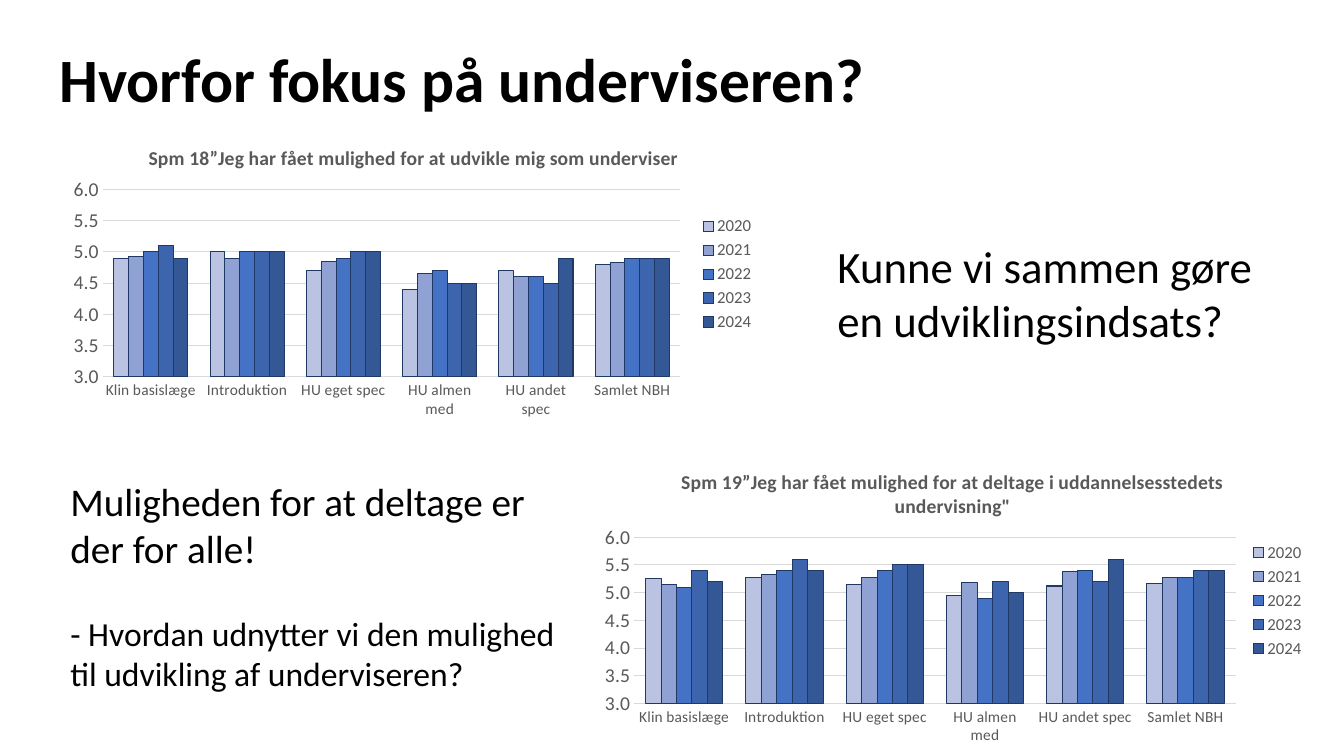
from lxml import etree
from pptx import Presentation
from pptx.chart.data import CategoryChartData
from pptx.dml.color import RGBColor
from pptx.enum import chart as charts, text as texts
from pptx.oxml import ns
from pptx.util import Pt

FONT = "Calibri"
COLORS = {
    "text": "000000",
    "label": "595959",
    "grid": "D9D9D9",
    "outline": "203864",
    "2020": "BAC4E2",
    "2021": "90A2D3",
    "2022": "4472C4",
    "2023": "3C65AE",
    "2024": "345795",
}
GROUPS = ["Klin basislæge", "Introduktion", "HU eget spec",
          "HU almen med", "HU andet spec", "Samlet NBH"]
DEVELOP_SCORES = {
    "2020": [4.9, 5, 4.7, 4.4, 4.7, 4.8],
    "2021": [4.93, 4.9, 4.85, 4.66, 4.6, 4.83],
    "2022": [5, 5, 4.9, 4.7, 4.6, 4.9],
    "2023": [5.1, 5, 5, 4.5, 4.5, 4.9],
    "2024": [4.9, 5, 5, 4.5, 4.9, 4.9],
}
ATTEND_SCORES = {
    "2020": [5.25, 5.27, 5.14, 4.94, 5.12, 5.17],
    "2021": [5.15, 5.32, 5.27, 5.19, 5.38, 5.27],
    "2022": [5.1, 5.4, 5.4, 4.9, 5.4, 5.27],
    "2023": [5.4, 5.6, 5.5, 5.2, 5.2, 5.4],
    "2024": [5.2, 5.4, 5.5, 5, 5.6, 5.4],
}


def rgb(name):
    return RGBColor.from_string(COLORS[name])


def style_font(font, size, color="label", bold=False):
    font.name = FONT
    font.size = Pt(size)
    font.bold = bold
    font.color.rgb = rgb(color)


def write(paragraph, content, size, color="text", bold=False, before=0, spacing=1.0):
    paragraph.space_before = Pt(before)
    paragraph.line_spacing = spacing
    run = paragraph.add_run()
    run.text = content
    style_font(run.font, size, color, bold)


def add_frame(slide, box, anchor=texts.MSO_ANCHOR.TOP):
    frame = slide.shapes.add_textbox(*map(Pt, box)).text_frame
    frame.word_wrap = True
    frame.vertical_anchor = anchor
    return frame


def style_line(line, color):
    line.color.rgb = rgb(color)
    line.width = Pt(0.75)


def place(parent, index, **fractions):
    for old in parent.findall(ns.qn("c:layout")):
        parent.remove(old)
    layout = etree.Element(ns.qn("c:layout"))
    manual = etree.SubElement(layout, ns.qn("c:manualLayout"))
    settings = {"xMode": "edge", "yMode": "edge", **fractions}
    if "w" in fractions:
        settings = {"layoutTarget": "inner", **settings}
    for tag, value in settings.items():
        etree.SubElement(manual, ns.qn(f"c:{tag}")).set("val", str(value))
    parent.insert(index, layout)


def add_scores(slide, box, question, scores, title_spot, plot_spot):
    data = CategoryChartData(number_format="0.0")
    data.categories = GROUPS
    for year, values in scores.items():
        data.add_series(year, values)
    chart = slide.shapes.add_chart(
        charts.XL_CHART_TYPE.COLUMN_CLUSTERED, *map(Pt, box), data).chart
    style_font(chart.font, 10, "text")

    heading = chart.chart_title
    write(heading.text_frame.paragraphs[0], question, 14, "label", bold=True)
    heading.include_in_layout = False
    place(chart.element.find(".//" + ns.qn("c:title")), 1, **title_spot)
    place(chart.element.find(".//" + ns.qn("c:plotArea")), 0, **plot_spot)

    chart.has_legend = True
    chart.legend.position = charts.XL_LEGEND_POSITION.RIGHT
    chart.legend.include_in_layout = False
    style_font(chart.legend.font, 12)

    groups, score = chart.category_axis, chart.value_axis
    for axis, size in ((groups, 11), (score, 14)):
        axis.major_tick_mark = axis.minor_tick_mark = charts.XL_TICK_MARK.NONE
        style_font(axis.tick_labels.font, size)
    style_line(groups.format.line, "grid")
    score.format.line.fill.background()
    score.minimum_scale, score.maximum_scale, score.major_unit = 3, 6, 0.5
    score.tick_labels.number_format = "0.0"
    score.tick_labels.number_format_is_linked = False
    style_line(score.major_gridlines.format.line, "grid")

    plot = chart.plots[0]
    plot.gap_width = 150
    plot.overlap = 0
    plot.vary_by_categories = False
    for year in plot.series:
        year.format.fill.solid()
        year.format.fill.fore_color.rgb = rgb(year.name)
        style_line(year.format.line, "outline")


def main():
    deck = Presentation()
    deck.slide_width, deck.slide_height = Pt(960), Pt(540)
    slide = deck.slides.add_slide(deck.slide_layouts[6])

    title = add_frame(slide, (35.3, 6.5, 828, 104.4), texts.MSO_ANCHOR.MIDDLE)
    write(title.paragraphs[0], "Hvorfor fokus på underviseren?", 44, bold=True, spacing=0.9)

    add_scores(slide, (43.2, 87.8, 503.3, 216),
               "Spm 18”Jeg har fået mulighed for at udvikle mig som underviser",
               DEVELOP_SCORES, {"x": 0.12, "y": 0.06},
               {"x": 0.06, "y": 0.22, "w": 0.82, "h": 0.62})
    add_scores(slide, (421.9, 321.1, 517.7, 216),
               'Spm 19”Jeg har fået mulighed for at deltage i uddannelsesstedets undervisning"',
               ATTEND_SCORES, {"x": 0.12, "y": 0.05},
               {"x": 0.06, "y": 0.29, "w": 0.83, "h": 0.55})

    proposal = add_frame(slide, (591.1, 167, 316.1, 85))
    write(proposal.paragraphs[0], "Kunne vi sammen gøre en udviklingsindsats?", 32)

    reflection = add_frame(slide, (43.2, 337.7, 372.2, 162.7))
    write(reflection.paragraphs[0], "Muligheden for at deltage er der for alle!", 28)
    write(reflection.add_paragraph(),
          "- Hvordan udnytter vi den mulighed til udvikling af underviseren?", 24, before=29.3)

    deck.save("out.pptx")


if __name__ == "__main__":
    main()
